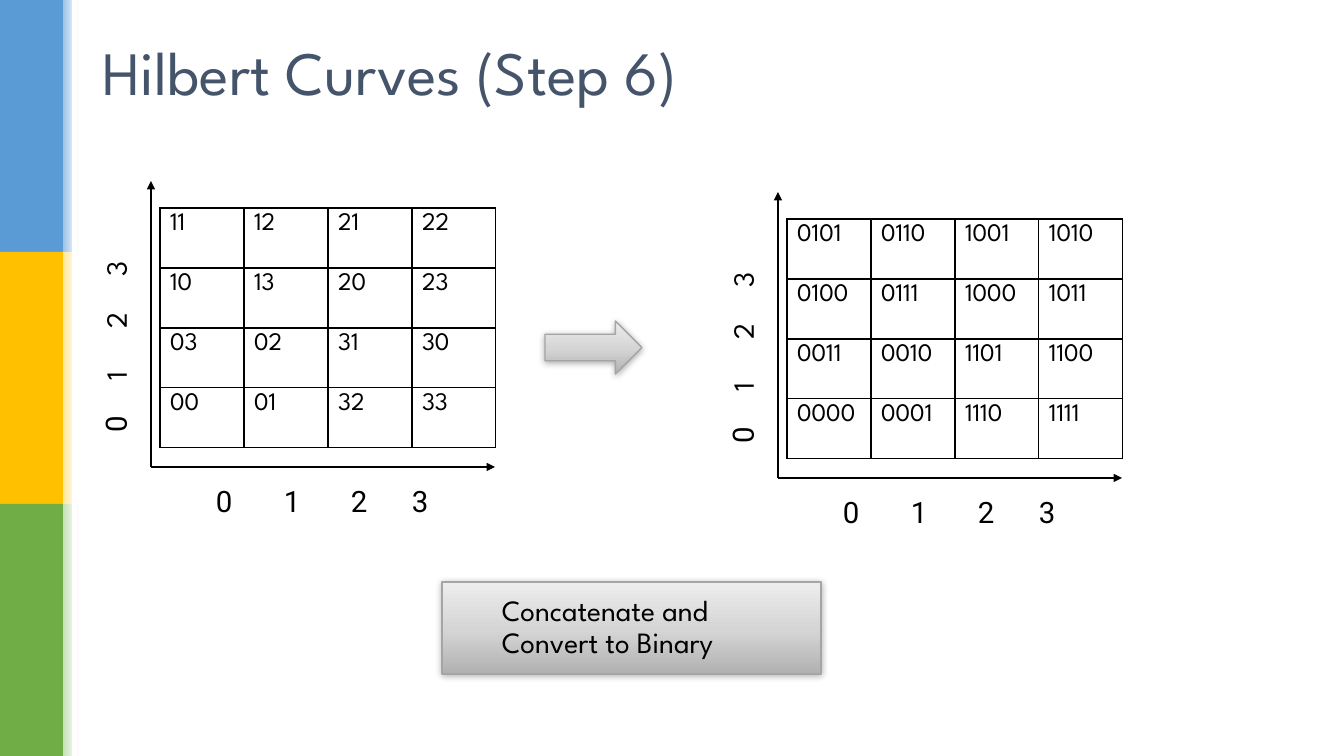
from lxml import etree
from pptx import Presentation
from pptx.dml.color import RGBColor
from pptx.enum.shapes import MSO_CONNECTOR, MSO_SHAPE
from pptx.enum.text import MSO_ANCHOR, PP_ALIGN
from pptx.oxml.ns import qn
from pptx.util import Emu, Pt

RECT, ARROW = MSO_SHAPE.RECTANGLE, MSO_SHAPE.RIGHT_ARROW
STRAIGHT = MSO_CONNECTOR.STRAIGHT
TOP, MIDDLE = MSO_ANCHOR.TOP, MSO_ANCHOR.MIDDLE
LEFT = PP_ALIGN.LEFT
PX = 914400 / 100.8

THEME = {
    "font": "League Spartan", "digit_font": "Roboto",
    "title": "44546A", "ink": "000000", "paper": "FFFFFF", "edge": "A5A5A5",
    "bands": [("5B9BD5", "9DC3E6"), ("FFC000", "FFE699"), ("70AD47", "C5E0B4")],
    "metal": [(0, "B1B1B1"), (48, "D5D5D5"), (100, "EDEDED")],
    "title_size": 44, "label_size": 21, "cell_size": 18,
}

prs = Presentation()
prs.slide_width, prs.slide_height = Emu(round(1344 * PX)), Emu(round(756 * PX))
slide = prs.slides.add_slide(prs.slide_layouts[6])


def add_box(kind, x, y, w, h, fill, angle=0):
    """Add a shape with a solid colour or a list of gradient stops."""
    s = slide.shapes.add_shape(kind, *(Emu(round(v * PX)) for v in (x, y, w, h)))
    s.shadow.inherit = False
    s.line.fill.background()
    if isinstance(fill, str):
        s.fill.solid()
        s.fill.fore_color.rgb = RGBColor.from_string(fill)
        return s
    s.fill.gradient()
    s.fill.gradient_angle = angle
    stops = s._element.spPr.find(qn("a:gradFill")).find(qn("a:gsLst"))
    for stop in list(stops):
        stops.remove(stop)
    for pos, color in fill:
        stop = etree.SubElement(stops, qn("a:gs"), pos=str(pos * 1000))
        etree.SubElement(stop, qn("a:srgbClr"), val=color)
    return s


def add_text(tf, runs, size, color=THEME["ink"], anchor=TOP):
    """Fill the first paragraph with (text, font) runs."""
    tf.word_wrap = True
    tf.vertical_anchor = anchor
    p = tf.paragraphs[0]
    p.alignment = LEFT
    for text, font in runs:
        r = p.add_run()
        r.text = text
        r.font.name, r.font.size = font, Pt(size)
        r.font.color.rgb = RGBColor.from_string(color)
    return p


# Side bands with a soft edge
for i, (strong, soft) in enumerate(THEME["bands"]):
    add_box(RECT, 0, i * 252, 63, 252, strong)
    add_box(RECT, 63, i * 252, 16, 252, [(0, soft), (100, THEME["paper"])])
add_box(RECT, 72, 0, 5, 756, THEME["paper"])

# Title
s = slide.shapes.add_textbox(*(Emu(round(v * PX)) for v in (93, 15, 1159, 111)))
add_text(s.text_frame, [("Hilbert Curves (Step 6)", THEME["font"])],
         THEME["title_size"], THEME["title"], MIDDLE)

# Two grids with their axes
GRIDS = [
    (160, 208, ["11 12 21 22", "10 13 20 23", "03 02 31 30", "00 01 32 33"]),
    (787, 219, ["0101 0110 1001 1010", "0100 0111 1000 1011",
                "0011 0010 1101 1100", "0000 0001 1110 1111"]),
]
COL, ROW = 84, 60
for left, top, rows in GRIDS:
    frame = slide.shapes.add_table(
        4, 4, *(Emu(round(v * PX)) for v in (left, top, 4 * COL, 4 * ROW)))
    for i, row in enumerate(rows):
        for j, code in enumerate(row.split()):
            cell = frame.table.cell(i, j)
            add_text(cell.text_frame, [(code, THEME["font"])], THEME["cell_size"])
            cell.fill.solid()
            cell.fill.fore_color.rgb = RGBColor.from_string(THEME["paper"])
            props = cell._tc.get_or_add_tcPr()
            for k, side in enumerate(("a:lnL", "a:lnR", "a:lnT", "a:lnB")):
                border = etree.Element(qn(side), w=str(Pt(1)))
                paint = etree.SubElement(border, qn("a:solidFill"))
                etree.SubElement(paint, qn("a:srgbClr"), val=THEME["ink"])
                props.insert(k, border)

    # Axes
    ox, oy = left - 9, top + 259
    for ex, ey in ((ox + 344, oy), (ox, oy - 286)):
        axis = slide.shapes.add_connector(
            STRAIGHT, *(Emu(round(v * PX)) for v in (ox, oy, ex, ey)))
        axis.line.width = Pt(1.75)
        axis.line.color.rgb = RGBColor.from_string(THEME["ink"])
        etree.SubElement(axis.line._get_or_add_ln(), qn("a:tailEnd"), type="triangle")
        etree.SubElement(axis._element.spPr, qn("a:effectLst"))

    # Axis numbers, spaced by tab stops
    for dx, dy, turn, inset, tabs, font in (
            (46, 270, 0, 10, (68, 135, 196), THEME["digit_font"]),
            (-177, 99, 270, 34, (52, 104, 156), THEME["font"])):
        s = add_box(RECT, left + dx, top + dy, 269, 50, THEME["paper"])
        s.rotation = turn
        s.text_frame.margin_left = Emu(round(inset * PX))
        stops = etree.SubElement(
            s.text_frame.paragraphs[0]._p.get_or_add_pPr(), qn("a:tabLst"))
        for tab in tabs:
            etree.SubElement(stops, qn("a:tab"), pos=str(round(tab * PX)), algn="l")
        add_text(s.text_frame, [("0\t", THEME["digit_font"]), ("1\t2\t3", font)],
                 THEME["label_size"])

# Metallic arrow and caption
arrow = add_box(ARROW, 545, 321, 97, 53, THEME["metal"], 90)
caption = add_box(RECT, 442, 582, 379, 92, THEME["metal"], 90)
for s in (arrow, caption):
    s.line.color.rgb = RGBColor.from_string(THEME["edge"])
    s.line.width = Pt(1)
    shadow = etree.SubElement(
        s._element.spPr.find(qn("a:effectLst")), qn("a:outerShdw"),
        blurRad=str(Pt(5)), dist=str(Pt(1)), dir="5400000", rotWithShape="0")
    tint = etree.SubElement(shadow, qn("a:srgbClr"), val=THEME["ink"])
    etree.SubElement(tint, qn("a:alpha"), val="32000")
p = add_text(caption.text_frame, [("Concatenate and Convert to Binary", THEME["font"])],
             THEME["label_size"], anchor=MIDDLE)
p.line_spacing = 0.9
p._p.get_or_add_pPr().set("marL", str(round(50 * PX)))

prs.save("out.pptx")
